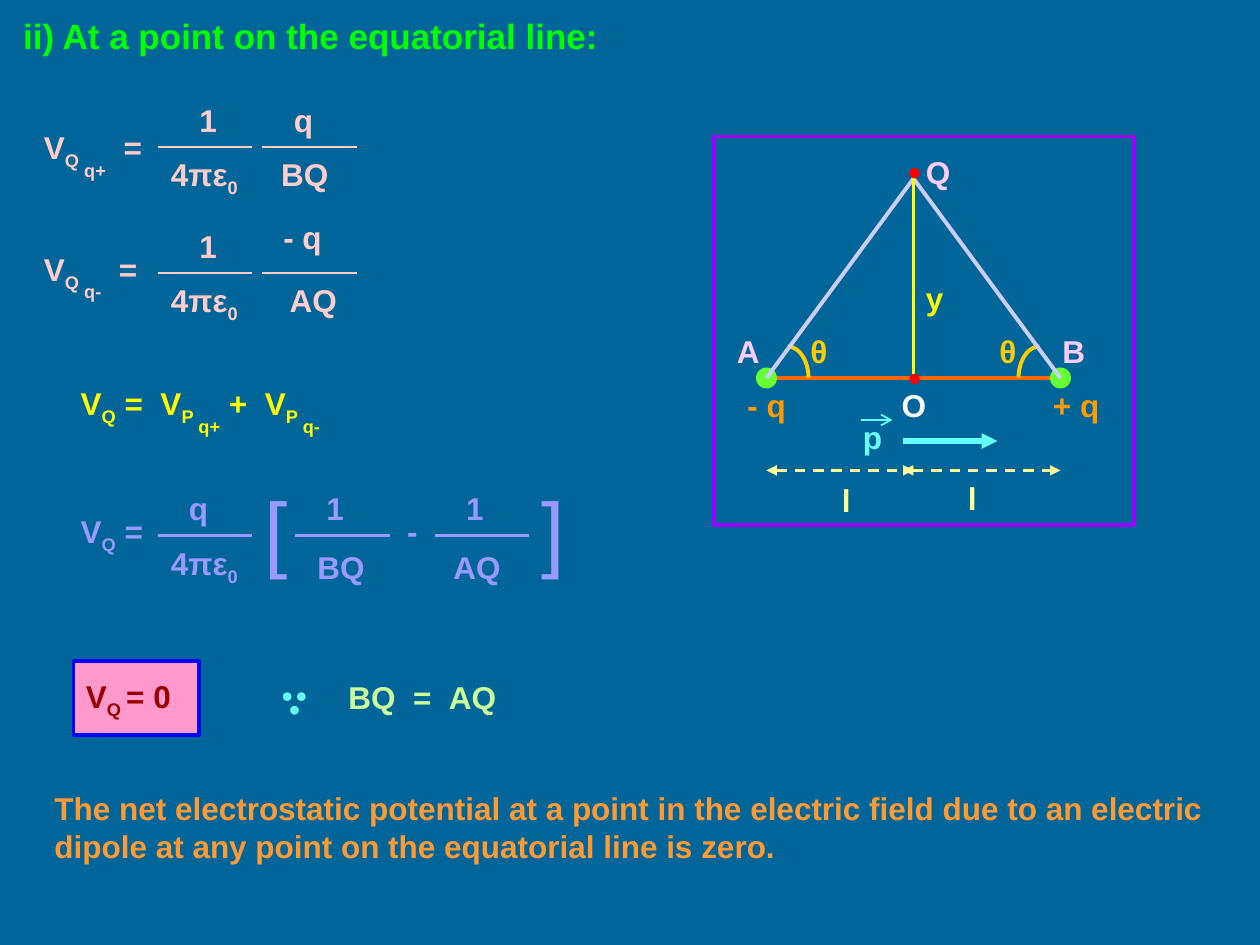
from lxml.etree import SubElement
from pptx import Presentation
from pptx.dml.color import RGBColor
from pptx.enum.dml import MSO_LINE_DASH_STYLE as DASH
from pptx.enum.shapes import MSO_CONNECTOR, MSO_SHAPE as SHAPE
from pptx.enum.text import MSO_ANCHOR, MSO_AUTO_SIZE, PP_ALIGN
from pptx.oxml.ns import qn
from pptx.util import Inches, Pt

# The slide is a grid of 120 columns by 90 rows, twelve to the inch
COLS, ROWS = 120, 90
UNIT = Inches(10) / COLS

COLORS = {
    "back": "006699", "title": "00FF00", "pink": "FFCCCC", "yellow": "FFFF00",
    "violet": "9999FF", "maroon": "990000", "rose": "FF99CC", "blue": "0000FF",
    "lime": "CCFF99", "cyan": "66FFFF", "statement": "FF9933", "frame": "9900FF",
    "point": "FFCCFF", "angle": "FFCC00", "charge": "FF9900", "ball": "66FF33",
    "axis": "FF6600", "side": "CCCCFF", "dot": "FF0000", "white": "FFFFFF",
    "length": "FFFF99",
}
# Run attributes; "wide" stretches a single space
SPAN_STYLES = {
    "sub": {"baseline": "-25000"},
    "deep": {"baseline": "-56000"},
    "wide": {"spc": "500"},
}
FRAME_FORMAT = {"word_wrap": True, "auto_size": MSO_AUTO_SIZE.NONE,
                "vertical_anchor": MSO_ANCHOR.TOP}
FOUR_PI_EPSILON = ["4πε", ("0", "sub")]
LINE_HEIGHT = 4.8


def color(name):
    return RGBColor.from_string(COLORS[name])


def grid(*values):
    return [round(value * UNIT) for value in values]


def set_all(target, values):
    for name, value in values.items():
        setattr(target, name, value)


def write(box, spans, ink, size=18, bold=True, **frame_format):
    """Fill a box with plain strings and (text, style) pairs."""
    set_all(box.text_frame, {**FRAME_FORMAT, **frame_format})
    para = box.text_frame.paragraphs[0]
    para.alignment = PP_ALIGN.LEFT
    for item in [spans] if isinstance(spans, str) else spans:
        text, style = (item, None) if isinstance(item, str) else item
        span = para.add_run()
        span.text = text
        set_all(span.font, {"name": "Arial", "size": Pt(size), "bold": bold})
        span.font.color.rgb = color(ink)
        for name, value in SPAN_STYLES.get(style, {}).items():
            span.font._element.set(name, value)


def add_text(page, x, y, spans, ink, width=8, height=LINE_HEIGHT, **text_format):
    box = page.shapes.add_textbox(*grid(x, y, width, height))
    write(box, spans, ink, **text_format)


def add_figure(page, kind, x, y, width, height, fill=None, line=None, weight=2.25):
    figure = page.shapes.add_shape(kind, *grid(x, y, width, height))
    figure.shadow.inherit = False
    if fill:
        figure.fill.solid()
        figure.fill.fore_color.rgb = color(fill)
    else:
        figure.fill.background()
    if line:
        figure.line.color.rgb = color(line)
        figure.line.width = Pt(weight)
    else:
        figure.line.fill.background()
    return figure


def add_ball(page, center, size, fill):
    x, y = center
    add_figure(page, SHAPE.OVAL, x - size / 2, y - size / 2, size, size, fill)


def add_line(page, start, end, ink, weight=2.25, dash=None, head=None, tail=None):
    line = page.shapes.add_connector(MSO_CONNECTOR.STRAIGHT, *grid(*start, *end))
    line.line.color.rgb = color(ink)
    line.line.width = Pt(weight)
    if dash:
        line.line.dash_style = dash
    outline = line.line._get_or_add_ln()
    for tag, arrow in (("a:headEnd", head), ("a:tailEnd", tail)):
        if arrow:
            SubElement(outline, qn(tag), type=arrow)
    SubElement(line._element.spPr, qn("a:effectLst"))


def add_fraction(page, x, y, over, under, ink, rise=5, drop=0.2):
    """Draw a bar at x, y; over and under are (spans, shift to the right)."""
    add_line(page, (x, y), (x + 9, y), ink, 1.5)
    for (spans, shift), top in ((over, y - rise), (under, y + drop)):
        add_text(page, x + shift, top, spans, ink, 10)


def add_title(page):
    title = page.shapes.title
    bounds = grid(1, 0.8, 58, 5.2)
    set_all(title, dict(zip(("left", "top", "width", "height"), bounds)))
    write(title, "ii) At a point on the equatorial line:", "title", size=20)


def add_equations(page):
    # Potential of each charge
    charges = (("q+", 14, 11.6, ("q", 1.8), ("BQ", 0.6), 5),
               ("q-", 26, 23.2, ("- q", 0.8), ("AQ", 1.4), 5.8))
    for sign, bar, top, over, under, rise in charges:
        left_side = ["V", ("Q ", "sub"), (sign, "deep"), (" ", "wide"), "="]
        add_text(page, 3, top, left_side, "pink", 14)
        add_fraction(page, 15, bar, ("1", 2.8), (FOUR_PI_EPSILON, 0.1), "pink")
        add_fraction(page, 25, bar, over, under, "pink", rise)

    # Sum of the two potentials
    total = ["V", ("Q", "sub"), " =", (" ", "wide"), "V", ("P ", "sub"),
             ("q+", "deep"), " +", (" ", "wide"), "V", ("P ", "sub"), ("q-", "deep")]
    add_text(page, 6.5, 36, total, "yellow", 28)

    # Sum written with distances
    add_text(page, 6.5, 48.2, ["V", ("Q", "sub"), " ="], "violet", 10)
    add_fraction(page, 15, 51, ("q", 1.8), (FOUR_PI_EPSILON, 0.1), "violet")
    for x, distance, shift in ((28.1, "BQ", 0.95), (41.4, "AQ", 0.6)):
        add_fraction(page, x, 51, ("1", 1.8), (distance, shift), "violet", drop=0.6)
    add_text(page, 37.6, 48.2, "-", "violet", 4)
    for x, bracket in ((24, "["), (50.4, "]")):
        add_text(page, x, 45, bracket, "violet", 5, 10.8, size=48, bold=False)


def add_result(page):
    result = add_figure(page, SHAPE.RECTANGLE, 7, 63, 12, 7, "rose", "blue")
    write(result, ["V", ("Q ", "sub"), "= 0"], "maroon",
          vertical_anchor=MSO_ANCHOR.MIDDLE)
    # Because sign
    for x, y in ((27, 66), (28.35, 66), (27.7, 67.3)):
        add_figure(page, SHAPE.OVAL, x, y, 0.7, 0.7, "cyan", "cyan", 0.75)
    reason = ["BQ", (" ", "wide"), "=", (" ", "wide"), "AQ"]
    add_text(page, 32, 64, reason, "lime", 18)
    add_text(page, 4, 74.6, "The net electrostatic potential at a point in the "
             "electric field due to an electric dipole at any point on the "
             "equatorial line is zero.", "statement", 112, 8.4)


def add_diagram(page):
    a, b, o, q = (73, 36), (101, 36), (87, 36), (87, 17)
    add_figure(page, SHAPE.RECTANGLE, 68, 13, 40, 37, line="frame")

    # Dipole and triangle
    for corner in (a, b):
        add_ball(page, corner, 2, "ball")
    add_line(page, (74, 36), (100, 36), "axis")
    # Angle marks: quarter ellipses, adjusted in units of 5/3 degree
    for x, start, end in ((73, 270, 0), (97, 180, 270)):
        arc = add_figure(page, SHAPE.ARC, x, 33, 4, 6, line="angle")
        arc.adjustments[0], arc.adjustments[1] = start * 0.6, end * 0.6
    for corner in (a, b):
        add_line(page, corner, q, "side")
    add_line(page, o, q, "yellow")
    for center in ((87.1, 36.1), (87.1, 16.5)):
        add_ball(page, center, 1, "dot")

    # Dipole moment and half lengths
    add_line(page, (86, 42), (95, 42), "cyan", 3, tail="triangle")
    add_line(page, (82, 40), (85, 40), "cyan", 1, tail="arrow")
    for start, end in ((73, 87), (86, 101)):
        add_line(page, (start, 44.8), (end, 44.8), "length", 1.5, DASH.DASH,
                 "triangle", "triangle")

    # Labels
    labels = (("A", 69, 31, "point"), ("B", 100, 31, "point"), ("Q", 87, 14, "point"),
              ("θ", 76, 31, "angle"), ("θ", 94, 31, "angle"), ("y", 87, 26, "yellow"),
              ("- q", 70, 36.2, "charge"), ("+ q", 99.1, 36.2, "charge"),
              ("O", 84.7, 36.2, "white"), ("p", 81, 39.2, "cyan"),
              ("l", 79, 45.2, "length"), ("l", 91, 45, "length"))
    for text, x, y, ink in labels:
        add_text(page, x, y, text, ink, 6.8)


def main():
    deck = Presentation()
    deck.slide_width, deck.slide_height = grid(COLS, ROWS)
    page = deck.slides.add_slide(deck.slide_layouts[5])
    page.background.fill.solid()
    page.background.fill.fore_color.rgb = color("back")
    add_title(page)
    add_equations(page)
    add_result(page)
    add_diagram(page)
    deck.save("out.pptx")


if __name__ == "__main__":
    main()
